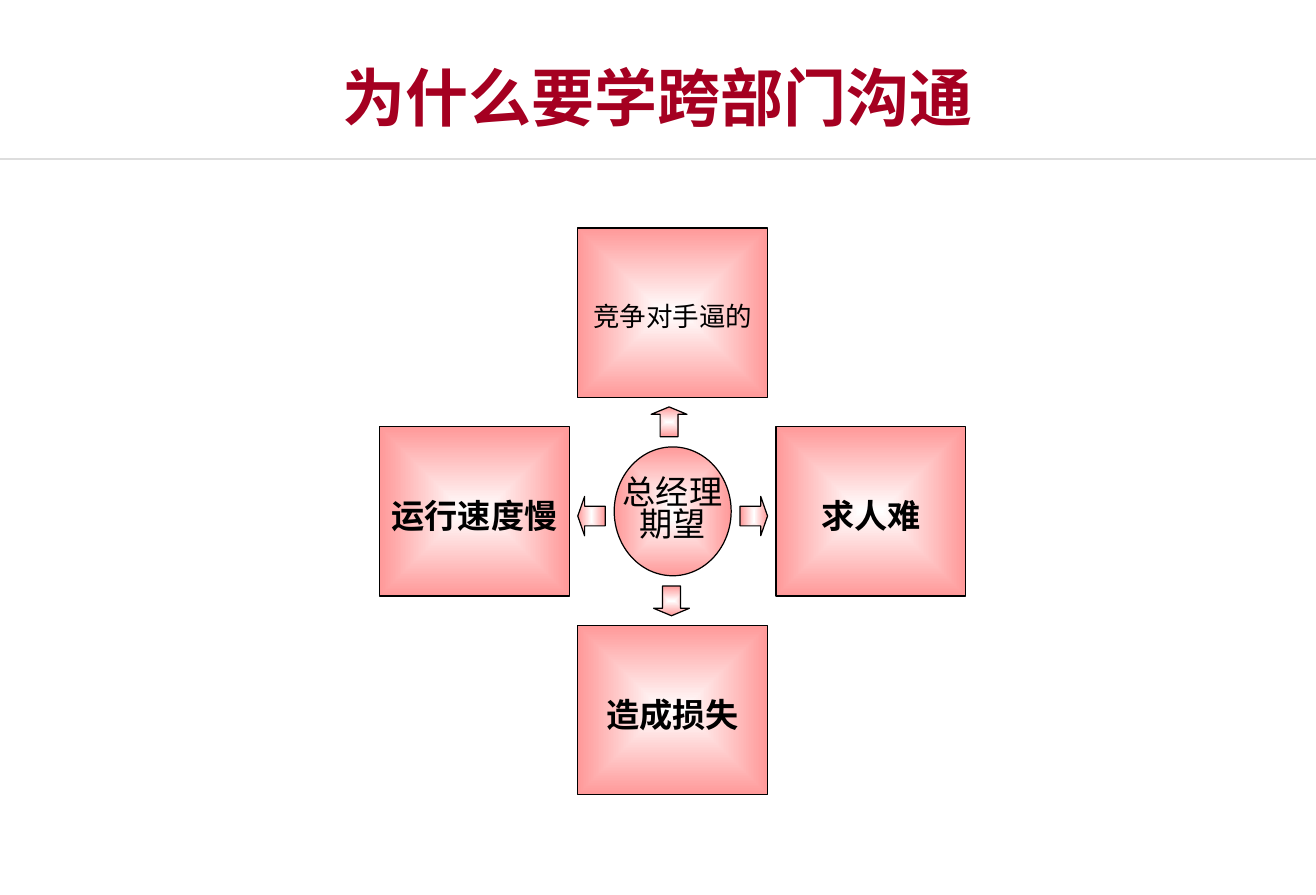
from lxml.etree import SubElement
from pptx import Presentation
from pptx.dml.color import RGBColor
from pptx.enum.shapes import MSO_CONNECTOR, MSO_SHAPE as Shape
from pptx.enum.text import MSO_ANCHOR as Anchor, MSO_AUTO_SIZE as AutoSize, PP_ALIGN as Align
from pptx.oxml import parse_xml
from pptx.oxml.ns import nsdecls, qn
from pptx.util import Cm, Inches, Pt

WIDTH, HEIGHT = Cm(28), Cm(19.05)
FONT = "Noto Sans CJK SC"
BLACK, CRIMSON, GREY, WHITE, PINK = "000000", "A50021", "DDDDDD", "FFFFFF", "FF9999"

# Name, size, bold, grid column and row, arrow with its size and centre offset from the hub
REASONS = [
    ("竞争对手逼的", 16, False, (0, -1), Shape.UP_ARROW, (0.3, 0.25), (-0.03, -0.75)),
    ("求人难", 20, True, (1, 0), Shape.RIGHT_ARROW, (0.23, 0.33), (0.68, 0.04)),
    ("造成损失", 20, True, (0, 1), Shape.DOWN_ARROW, (0.3, 0.25), (-0.01, 0.75)),
    ("运行速度慢", 20, True, (-1, 0), Shape.LEFT_ARROW, (0.23, 0.33), (-0.68, 0.04)),
]


def color(value):
    return RGBColor.from_string(value)


def set_font(run, size, tone, bold=False):
    values = {"name": FONT, "size": Pt(size), "bold": bold}
    for key, value in values.items():
        setattr(run.font, key, value)
    run.font.color.rgb = color(tone)
    SubElement(run.font._element, qn("a:ea")).set("typeface", FONT)


def glow_fill(shape):
    """Fill from white in the centre to pink at the edges."""
    shape.fill.background()
    props = shape.fill._xPr
    stops = "".join(
        f'<a:gs pos="{pos}"><a:srgbClr val="{tone}"/></a:gs>'
        for pos, tone in ((0, WHITE), (100000, PINK)))
    gradient = parse_xml(
        f'<a:gradFill {nsdecls("a")} rotWithShape="1"><a:gsLst>{stops}</a:gsLst>'
        '<a:path path="shape"><a:fillToRect l="50000" t="50000" r="50000" b="50000"/>'
        '</a:path></a:gradFill>')
    props.replace(props.find(qn("a:noFill")), gradient)


def add_part(slide, kind, center, size):
    """Place a glowing shape around its centre point."""
    left, top = (c - s / 2 for c, s in zip(center, size))
    part = slide.shapes.add_shape(kind, *map(Inches, (left, top, *size)))
    part.shadow.inherit = False
    glow_fill(part)
    part.line.color.rgb = color(BLACK)
    part.line.width = Pt(0.75)
    return part


def write(part, lines, size, spacing, bold=False):
    frame = part.text_frame
    frame.word_wrap = False
    frame.vertical_anchor = Anchor.MIDDLE
    frame.text = "\n".join(lines)
    for paragraph in frame.paragraphs:
        paragraph.alignment = Align.CENTER
        paragraph.line_spacing = spacing
        set_font(paragraph.runs[0], size, BLACK, bold)


def add_heading(slide, left, top, width, height):
    # Rule below the title
    rule_y = Inches(top + height + 0.16)
    rule = slide.shapes.add_connector(
        MSO_CONNECTOR.STRAIGHT, Inches(left), rule_y, Inches(left + width), rule_y)
    rule.line.color.rgb = color(GREY)
    rule.line.width = Pt(1)
    SubElement(rule.line._get_or_add_ln().getparent(), qn("a:effectLst"))

    # Title
    title = slide.shapes.title
    box = {"left": left, "top": top, "width": width, "height": height}
    for key, value in box.items():
        setattr(title, key, Inches(value))
    frame = title.text_frame
    frame.text = "为什么要学跨部门沟通"
    frame.word_wrap = True
    frame.auto_size = AutoSize.SHAPE_TO_FIT_TEXT
    frame.vertical_anchor = Anchor.BOTTOM
    frame.paragraphs[0].alignment = Align.CENTER
    set_font(frame.paragraphs[0].runs[0], 38, CRIMSON, True)


def add_reasons(slide, left, top, width, height):
    """Draw a cross of four reasons around the hub."""
    tile = (1.59, 1.42)
    step_x, step_y = (width - tile[0]) / 2, (height - tile[1]) / 2
    x, y = left + width / 2, top + height / 2

    # Hub
    hub = add_part(slide, Shape.OVAL, (x, y), (0.98, 1.08))
    write(hub, ["总经理", "期望"], 20, 0.8)

    # Reasons and the arrows that lead to them
    for name, size, bold, (col, row), arrow, arrow_size, (dx, dy) in REASONS:
        reason = add_part(slide, Shape.RECTANGLE, (x + col * step_x, y + row * step_y), tile)
        write(reason, [name], size, 1.2, bold)
        pointer = add_part(slide, arrow, (x + dx, y + dy), arrow_size)
        pointer.adjustments[0], pointer.adjustments[1] = 0.5, 0.25


def main():
    deck = Presentation()
    deck.slide_width = WIDTH
    deck.slide_height = HEIGHT
    slide = deck.slides.add_slide(deck.slide_layouts[5])
    add_heading(slide, 0, 0.44, WIDTH.inches, 0.73)
    add_reasons(slide, 3.18, 1.91, 4.91, 4.75)
    deck.save("out.pptx")


if __name__ == "__main__":
    main()
